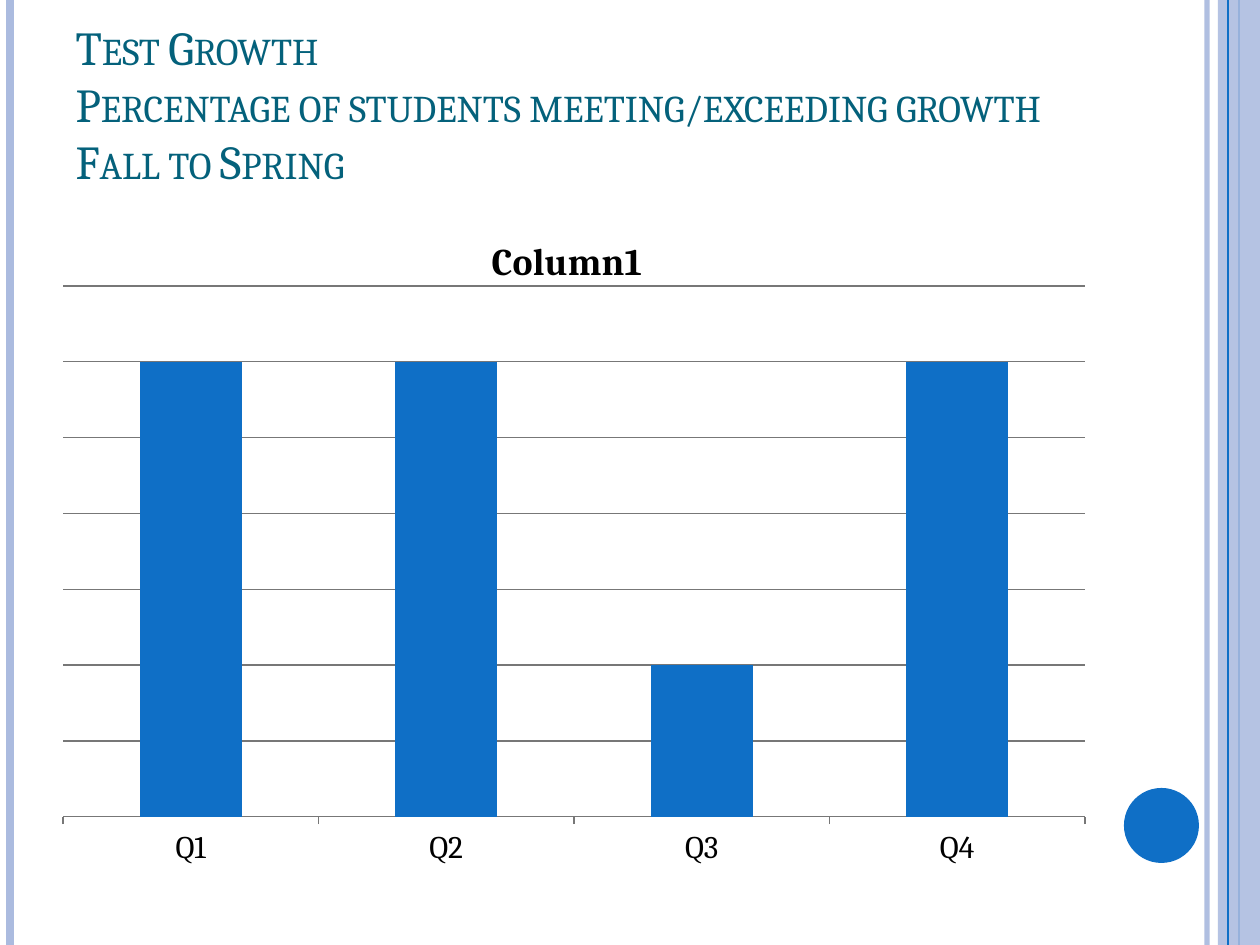
from lxml import etree
from pptx import Presentation
from pptx import util as u
from pptx.chart.data import CategoryChartData
from pptx.dml.color import RGBColor
from pptx.enum import chart as charts, shapes, text
from pptx.oxml import parse_xml
from pptx.oxml.ns import nsdecls, qn

EMU_PER_PX = 914400 / 126
FONT = "Cambria"
COLORS = {
    "blue": "0F6FC6",
    "pale": "ABBBDF",
    "title": "04617B",
    "grid": "777777",
    "black": "000000",
}


def px(length):
    return u.Emu(round(length * EMU_PER_PX))


def color(name):
    return RGBColor.from_string(COLORS[name])


def set_alpha(shape, percent):
    """Make the shape's single solid colour partly transparent."""
    rgb = next(shape._element.spPr.iter(qn("a:srgbClr")))
    etree.SubElement(rgb, qn("a:alpha")).set("val", str(percent * 1000))


def add_vertical_rule(slide, x, height, name, width, alpha=100):
    rule = slide.shapes.add_connector(
        shapes.MSO_CONNECTOR.STRAIGHT, px(x), 0, px(x), px(height))
    rule.line.color.rgb = color(name)
    rule.line.width = u.Pt(width)
    etree.SubElement(rule._element.spPr, qn("a:effectLst"))
    if alpha < 100:
        set_alpha(rule, alpha)


def add_solid(slide, kind, left, top, width, height, name):
    shape = slide.shapes.add_shape(kind, px(left), px(top), px(width), px(height))
    shape.shadow.inherit = False
    shape.fill.solid()
    shape.fill.fore_color.rgb = color(name)
    shape.line.fill.background()
    return shape


def add_side_borders(slide, width, height):
    add_vertical_rule(slide, width - 53, height, "pale", 3, 93)
    add_vertical_rule(slide, 10, height, "pale", 4.5)
    add_vertical_rule(slide, width - 21, height, "blue", 1.5)
    band = add_solid(slide, shapes.MSO_SHAPE.RECTANGLE,
                     width - 42, 0, 42, height, "pale")
    set_alpha(band, 87)
    add_vertical_rule(slide, width - 32, height, "blue", 0.75)
    add_solid(slide, shapes.MSO_SHAPE.OVAL, width - 136, height - 157, 75, 75, "blue")


def place_title(slide, left, top, width, height):
    title = slide.shapes.title
    title.left, title.top = px(left), px(top)
    title.width, title.height = px(width), px(height)
    frame = title.text_frame
    frame.text = ("Test Growth\v"
                  "Percentage of students meeting/exceeding growth Fall to Spring")
    frame.word_wrap = True
    frame.auto_size = text.MSO_AUTO_SIZE.NONE
    frame.vertical_anchor = text.MSO_ANCHOR.BOTTOM
    paragraph = frame.paragraphs[0]
    paragraph.alignment = text.PP_ALIGN.LEFT
    paragraph.line_spacing = 1.0
    for run in paragraph.runs:
        run.font.name = FONT
        run.font.size = u.Pt(27)
        run.font.color.rgb = color("title")
        run.font._element.set("cap", "small")


def set_plot_layout(chart, x, y, w, h):
    """Fix the inner plot area as fractions of the chart."""
    plot_area = chart._chartSpace.chart.plotArea
    for layout in plot_area.findall(qn("c:layout")):
        plot_area.remove(layout)
    sizes = "".join(f'<c:{key} val="{value}"/>'
                    for key, value in zip("xywh", (x, y, w, h)))
    plot_area.insert(0, parse_xml(
        f'<c:layout {nsdecls("c")}><c:manualLayout><c:layoutTarget val="inner"/>'
        f'<c:xMode val="edge"/><c:yMode val="edge"/>{sizes}'
        '</c:manualLayout></c:layout>'))


def add_growth_chart(slide, left, top, width, height):
    data = CategoryChartData()
    data.categories = ["Q1", "Q2", "Q3", "Q4"]
    data.add_series("Column1", [100, 100, 96, 100])
    chart = slide.shapes.add_chart(
        charts.XL_CHART_TYPE.COLUMN_CLUSTERED,
        px(left), px(top), px(width), px(height), data).chart
    chart.font.name = FONT
    chart.font.size = u.Pt(18)
    chart.font.color.rgb = color("black")
    chart.has_legend = False

    chart.has_title = True
    chart.chart_title.text_frame.text = "Column1"
    title_font = chart.chart_title.text_frame.paragraphs[0].runs[0].font
    title_font.name = FONT
    title_font.size = u.Pt(21.6)
    title_font.bold = True
    title_font.color.rgb = color("black")

    values = chart.value_axis
    values.visible = False
    values.minimum_scale, values.maximum_scale = 94, 101
    values.major_unit = 1
    values.has_major_gridlines = True
    categories = chart.category_axis
    categories.major_tick_mark = charts.XL_TICK_MARK.OUTSIDE
    for line in (values.major_gridlines.format.line, categories.format.line):
        line.color.rgb = color("grid")
        line.width = u.Pt(0.75)

    plot = chart.plots[0]
    plot.gap_width = 150
    plot.vary_by_categories = False
    bars = plot.series[0].format
    bars.fill.solid()
    bars.fill.fore_color.rgb = color("blue")
    plot_left, plot_top, plot_width, plot_height = 21, 76, 1022, 531
    set_plot_layout(chart, plot_left / width, plot_top / height,
                    plot_width / width, plot_height / height)


def main():
    width, height = 1260, 945
    presentation = Presentation()
    presentation.slide_width = px(width)
    presentation.slide_height = px(height)
    slide = presentation.slides.add_slide(presentation.slide_layouts[5])
    add_side_borders(slide, width, height)
    place_title(slide, 63, 38, 1029, 157)
    add_growth_chart(slide, 42, 210, 1050, 682)
    presentation.save("out.pptx")


if __name__ == "__main__":
    main()
